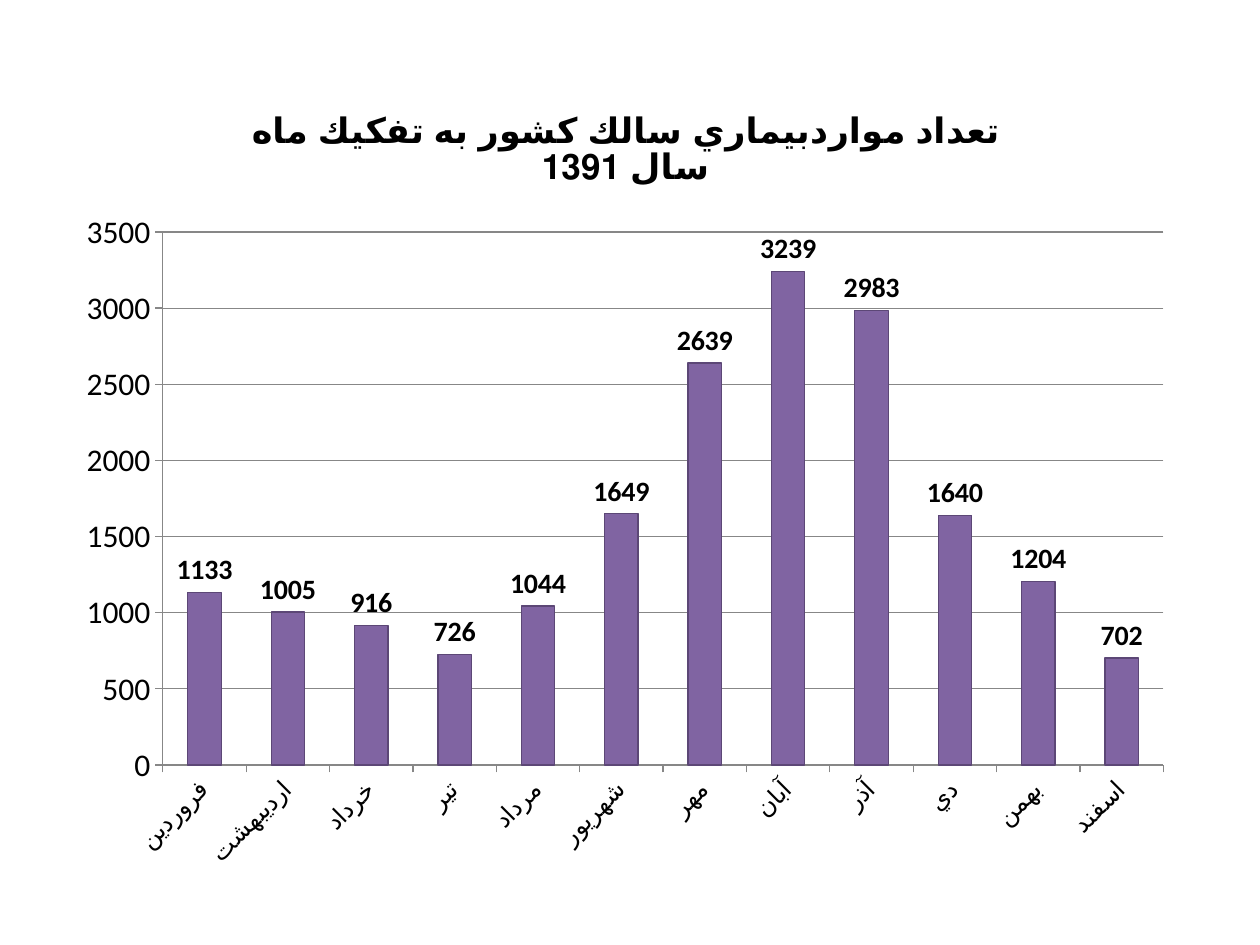
from lxml.etree import SubElement
from pptx import Presentation
from pptx.chart.data import CategoryChartData
from pptx.dml.color import RGBColor as RGB
from pptx.enum.chart import XL_CHART_TYPE as CT, XL_LABEL_POSITION as LP, XL_TICK_MARK as TM
from pptx.oxml.ns import qn
from pptx.util import Pt

PX = 914400 // 126
COLORS = {"text": "000000", "bar": "8064A2", "edge": "5C4776", "grid": "878787"}
C = {name: RGB.from_string(value) for name, value in COLORS.items()}
CASES = {
    "فروردين": 1133, "ارديبهشت": 1005, "خرداد": 916, "تير": 726,
    "مرداد": 1044, "شهريور": 1649, "مهر": 2639, "آبان": 3239,
    "آذر": 2983, "دي": 1640, "بهمن": 1204, "اسفند": 702,
}
LEFT, TOP, WIDTH, HEIGHT = 64, 86, 1123, 798
PLOT_LEFT, PLOT_TOP, PLOT_WIDTH, PLOT_HEIGHT = 163, 232, 1001, 533

prs = Presentation()
prs.slide_width, prs.slide_height = 1260 * PX, 945 * PX
s = prs.slides.add_slide(prs.slide_layouts[6])

data = CategoryChartData()
data.categories = list(CASES)
data.add_series("Series 1", list(CASES.values()))
box = [v * PX for v in (LEFT, TOP, WIDTH, HEIGHT)]
chart = s.shapes.add_chart(CT.COLUMN_CLUSTERED, *box, data).chart
chart.has_legend = False
chart.font.name = "Calibri"
chart.font.size = Pt(18)
chart.font.color.rgb = C["text"]

chart.has_title = True
tf = chart.chart_title.text_frame
tf.text = "تعداد مواردبيماري سالك كشور به تفكيك ماه\nسال 1391"
chart.chart_title.include_in_layout = False
for p in tf.paragraphs:
    p.font.size = Pt(20)
    p.font.bold = True
    for r in p.runs:
        r.font.name = "Calibri"
        r.font.size = Pt(20)
        r.font.bold = True
        r.font.color.rgb = C["text"]

cat, val = chart.category_axis, chart.value_axis
for axis in (cat, val):
    axis.major_tick_mark = TM.OUTSIDE
    axis.minor_tick_mark = TM.NONE
    axis.format.line.color.rgb = C["grid"]
    axis.format.line.width = Pt(0.75)
cat.tick_labels.font.size = Pt(14)
cat._element.find(qn("c:txPr")).find(qn("a:bodyPr")).set("rot", "-2700000")
val.minimum_scale, val.maximum_scale, val.major_unit = 0, 3500, 500
val.has_major_gridlines = True
val.major_gridlines.format.line.color.rgb = C["grid"]
val.major_gridlines.format.line.width = Pt(0.75)

plot = chart.plots[0]
plot.gap_width = 150
plot.vary_by_categories = False
bars = plot.series[0].format
bars.fill.solid()
bars.fill.fore_color.rgb = C["bar"]
bars.line.color.rgb = C["edge"]
bars.line.width = Pt(0.75)
plot.has_data_labels = True
labels = plot.data_labels
labels.show_value = True
labels.position = LP.OUTSIDE_END
labels.font.size = Pt(16)
labels.font.bold = True

area = chart._chartSpace.chart.plotArea
old = area.find(qn("c:layout"))
if old is not None:
    area.remove(old)
layout = SubElement(area, qn("c:layout"))
area.insert(0, layout)
manual = SubElement(layout, qn("c:manualLayout"))
for tag, value in (
    ("layoutTarget", "inner"), ("xMode", "edge"), ("yMode", "edge"),
    ("x", round((PLOT_LEFT - LEFT) / WIDTH, 3)),
    ("y", round((PLOT_TOP - TOP) / HEIGHT, 3)),
    ("w", round(PLOT_WIDTH / WIDTH, 3)),
    ("h", round(PLOT_HEIGHT / HEIGHT, 3)),
):
    SubElement(manual, qn(f"c:{tag}")).set("val", str(value))

prs.save("out.pptx")
